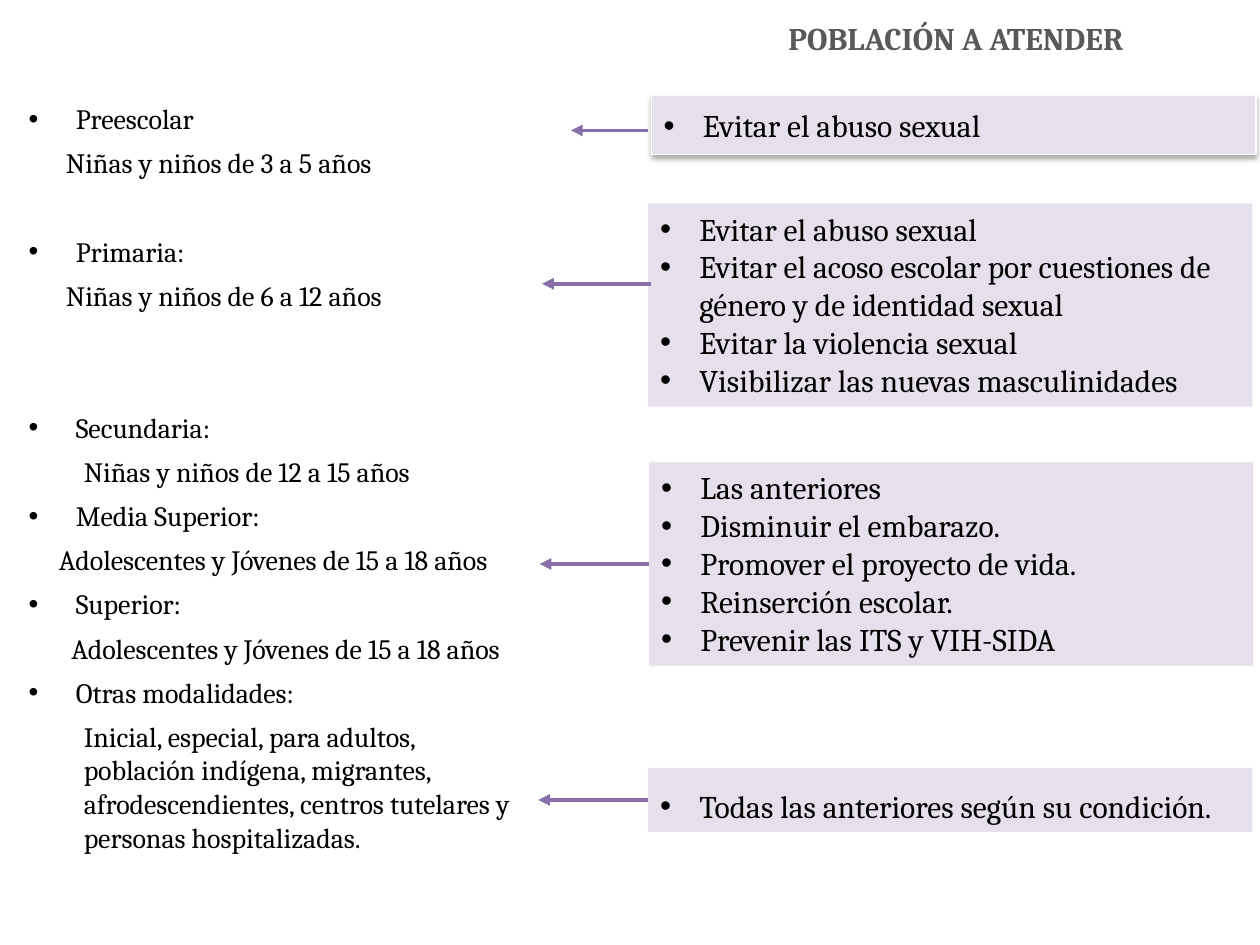
from dataclasses import dataclass

from lxml.etree import SubElement
from pptx import Presentation
from pptx.dml.color import RGBColor
from pptx.enum.dml import MSO_LINE
from pptx.enum.shapes import MSO_CONNECTOR, MSO_SHAPE
from pptx.enum.text import MSO_ANCHOR, MSO_AUTO_SIZE, PP_ALIGN
from pptx.oxml.ns import qn
from pptx.shapes.autoshape import Shape
from pptx.slide import Slide
from pptx.text.text import TextFrame
from pptx.util import Cm, Pt


@dataclass(frozen=True)
class Theme:
    font: str = "Cambria"
    heading: str = "595959"
    text: str = "000000"
    panel: str = "E6E0EC"
    border: str = "FFFFFF"
    arrow: str = "896FA9"
    shadow: str = "000000"
    large: int = 18
    medium: int = 16


@dataclass(frozen=True)
class Level:
    name: str
    audience: str
    indent: float
    gap: float = 0


@dataclass(frozen=True)
class Goals:
    left: float
    top: float
    height: float
    items: tuple[str, ...]
    arrow_start: float
    arrow_tip: float
    arrow_y: float | None = None
    raised: bool = False
    line_spacing: float | None = None


THEME = Theme()
PANEL_WIDTH = 12.19
LEVEL_INDENT = 0.95
GOAL_INDENT = 0.79

LEVELS = (
    Level("Preescolar", "Niñas y niños de 3 a 5 años", 0.75),
    Level("Primaria:", "Niñas y niños de 6 a 12 años", 0.75, gap=25.2),
    Level("Secundaria:", "Niñas y niños de 12 a 15 años", 1.11, gap=50.4),
    Level("Media Superior:", "Adolescentes y Jóvenes de 15 a 18 años", 0.61),
    Level("Superior:", "Adolescentes y Jóvenes de 15 a 18 años", 0.86),
    Level(
        "Otras modalidades:",
        "Inicial, especial, para adultos, población indígena, migrantes, "
        "afrodescendientes, centros tutelares y personas hospitalizadas.",
        1.11,
    ),
)

GOALS = (
    Goals(13.13, 1.93, 1.19, ("Evitar el abuso sexual",),
          13.06, 11.51, arrow_y=2.63, raised=True),
    Goals(13.06, 4.1, 4.1, (
        "Evitar el abuso sexual",
        "Evitar el acoso escolar por cuestiones de género y de identidad sexual",
        "Evitar la violencia sexual",
        "Visibilizar las nuevas masculinidades",
    ), 13.13, 10.93, arrow_y=5.72),
    Goals(13.08, 9.32, 4.1, (
        "Las anteriores",
        "Disminuir el embarazo.",
        "Promover el proyecto de vida.",
        "Reinserción escolar.",
        "Prevenir las ITS y VIH-SIDA",
    ), 13.08, 10.88),
    Goals(13.06, 15.48, 1.29, ("Todas las anteriores según su condición.",),
          13.06, 10.85, line_spacing=28.8),
)


def write_paragraph(frame: TextFrame, text: str, *, size: int, color: str = THEME.text,
                    bold: bool = False, align: PP_ALIGN = PP_ALIGN.LEFT,
                    indent: float = 0, bullet: bool = False, before: float = 0,
                    after: float = 0, line_spacing: float | None = None) -> None:
    para = frame.paragraphs[0]
    if para.runs:
        para = frame.add_paragraph()
    properties = para._p.get_or_add_pPr()
    properties.set("marL", str(Cm(indent)))
    properties.set("indent", str(-Cm(indent) if bullet else 0))
    if bullet:
        SubElement(properties, qn("a:buFont"), typeface="Arial")
        SubElement(properties, qn("a:buChar"), char="•")
    para.alignment = align
    para.space_before = Pt(before)
    para.space_after = Pt(after)
    if line_spacing:
        para.line_spacing = Pt(line_spacing)
    span = para.add_run()
    span.text = text
    span.font.name = THEME.font
    span.font.size = Pt(size)
    span.font.bold = bold
    span.font.color.rgb = RGBColor.from_string(color)


def raise_panel(panel: Shape) -> None:
    panel.line.color.rgb = RGBColor.from_string(THEME.border)
    panel.line.width = Pt(0.75)
    effects = panel._element.spPr.find(qn("a:effectLst"))
    shadow = SubElement(effects, qn("a:outerShdw"), blurRad=str(Pt(3.1)),
                        dist=str(Pt(1.8)), dir="5400000", rotWithShape="0")
    color = SubElement(shadow, qn("a:srgbClr"), val=THEME.shadow)
    SubElement(color, qn("a:alpha"), val="35000")


def draw_panel(page: Slide, goals: Goals) -> Shape:
    panel = page.shapes.add_shape(MSO_SHAPE.RECTANGLE, Cm(goals.left), Cm(goals.top),
                                  Cm(PANEL_WIDTH), Cm(goals.height))
    panel.shadow.inherit = False
    panel.fill.solid()
    panel.fill.fore_color.rgb = RGBColor.from_string(THEME.panel)
    panel.line.fill.background()
    if goals.raised:
        raise_panel(panel)
    frame = panel.text_frame
    frame.word_wrap = True
    frame.vertical_anchor = MSO_ANCHOR.MIDDLE if goals.raised else MSO_ANCHOR.TOP
    for item in goals.items:
        write_paragraph(frame, item, size=THEME.large, indent=GOAL_INDENT,
                        bullet=True, line_spacing=goals.line_spacing)
    return panel


def draw_arrow(page: Slide, goals: Goals, panel: Shape) -> None:
    joined = goals.arrow_y is None
    y = panel.top + panel.height // 2 if joined else Cm(goals.arrow_y)
    arrow = page.shapes.add_connector(MSO_CONNECTOR.STRAIGHT, Cm(goals.arrow_start), y,
                                      Cm(goals.arrow_tip), y)
    if joined:
        arrow.begin_connect(panel, 1)
    arrow.line.color.rgb = RGBColor.from_string(THEME.arrow)
    arrow.line.width = Pt(2.25)
    arrow.line.dash_style = MSO_LINE.SOLID
    SubElement(arrow.line._get_or_add_ln(), qn("a:tailEnd"), type="triangle")
    SubElement(arrow._element.spPr, qn("a:effectLst"))


def draw_title(page: Slide, text: str) -> None:
    title = page.shapes.title
    title.left, title.top, title.width, title.height = Cm(13.14), Cm(0.25), Cm(12.26), Cm(1.02)
    frame = title.text_frame
    frame.word_wrap = True
    frame.auto_size = MSO_AUTO_SIZE.NONE
    frame.vertical_anchor = MSO_ANCHOR.TOP
    write_paragraph(frame, text, size=THEME.large, color=THEME.heading, bold=True,
                    align=PP_ALIGN.CENTER)


def draw_levels(page: Slide) -> None:
    box = page.shapes.add_textbox(Cm(0.33), Cm(1.93), Cm(10.59), Cm(16.76))
    frame = box.text_frame
    frame.word_wrap = True
    frame.margin_right = Cm(0.53)
    for level in LEVELS:
        write_paragraph(frame, level.name, size=THEME.medium, indent=LEVEL_INDENT,
                        bullet=True, before=level.gap, after=6)
        write_paragraph(frame, level.audience, size=THEME.medium, indent=level.indent,
                        after=6)


def main() -> None:
    deck = Presentation()
    deck.slide_width, deck.slide_height = Cm(25.4), Cm(19.05)
    page = deck.slides.add_slide(deck.slide_layouts[5])
    draw_title(page, "POBLACIÓN A ATENDER")
    draw_levels(page)
    for goals in GOALS:
        panel = draw_panel(page, goals)
        draw_arrow(page, goals, panel)
    deck.save("out.pptx")


if __name__ == "__main__":
    main()
